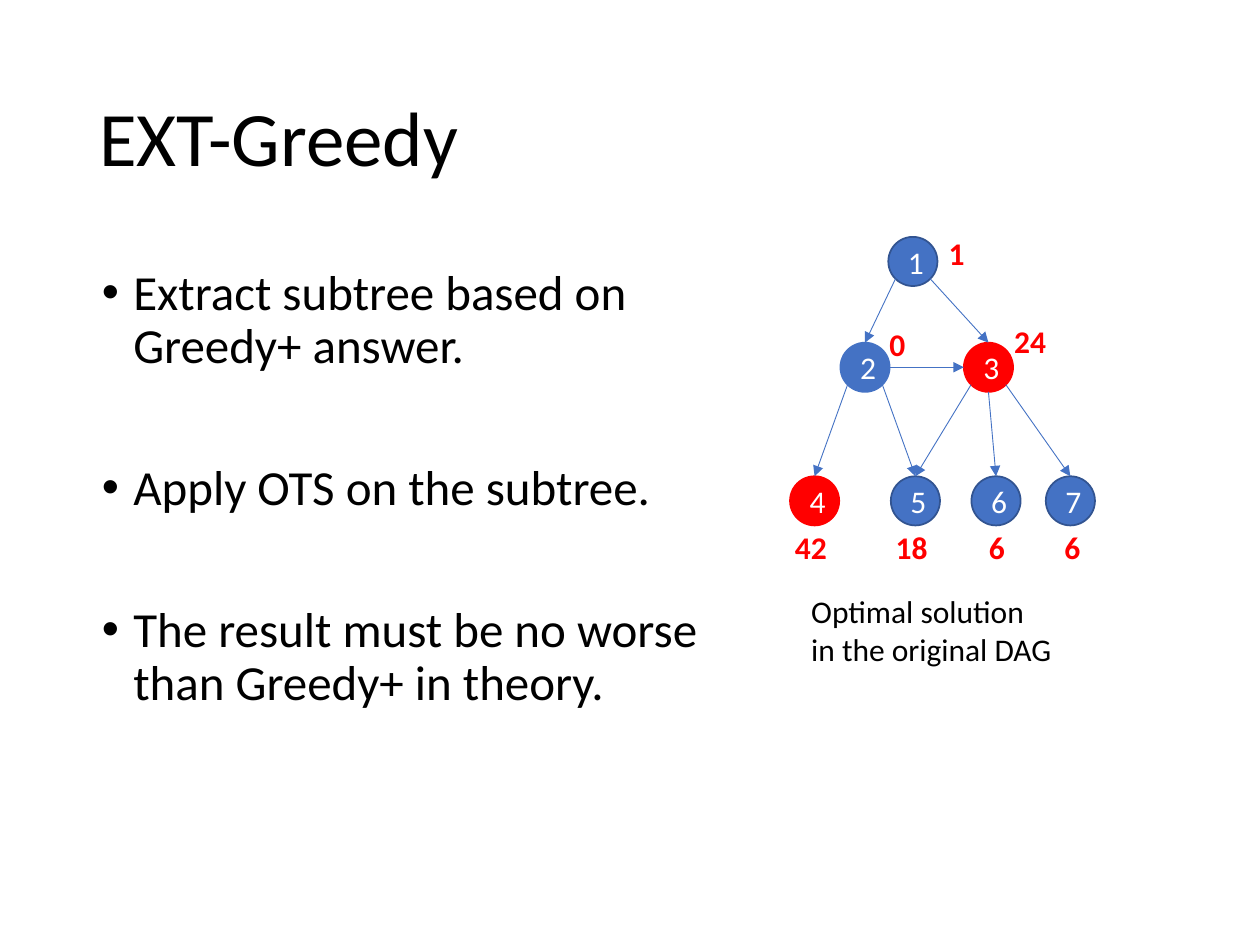
from math import cos, radians, sin

from lxml import etree
from pptx import Presentation
from pptx.dml.color import RGBColor
from pptx.enum.shapes import MSO_CONNECTOR, MSO_SHAPE
from pptx.enum.text import MSO_ANCHOR, PP_ALIGN
from pptx.oxml.ns import qn
from pptx.util import Inches, Pt

CIRCLE = MSO_SHAPE.FLOWCHART_CONNECTOR
STRAIGHT = MSO_CONNECTOR.STRAIGHT
MIDDLE = MSO_ANCHOR.MIDDLE
CENTER = PP_ALIGN.CENTER

FONT = "Calibri"
COLORS = {
    "black": "000000",
    "white": "FFFFFF",
    "blue": "4472C4",
    "navy": "325491",
    "red": "FF0000",
}
SIZE = 0.39
ROWS = (1.88, 2.72, 3.78)

# number: left, row, fill, outline
NODES = {
    1: (7.05, 0, "blue", "navy"),
    2: (6.67, 1, "blue", "blue"),
    3: (7.65, 1, "red", "red"),
    4: (6.27, 2, "red", "red"),
    5: (7.07, 2, "blue", "navy"),
    6: (7.71, 2, "blue", "navy"),
    7: (8.3, 2, "blue", "navy"),
}
# parent, child, angle on the parent's rim (clockwise from the right)
EDGES = [
    (1, 2, 135), (1, 3, 45),
    (2, 4, 135), (2, 5, 45), (2, 3, 0),
    (3, 5, 135), (3, 6, 90), (3, 7, 45),
]
# value, left, top
SCORES = [
    ("1", 7.43, 1.81), ("0", 6.96, 2.53), ("24", 7.95, 2.51),
    ("42", 6.21, 4.14), ("18", 7.01, 4.14),
    ("6", 7.75, 4.14), ("6", 8.35, 4.14),
]
POINTS = [
    "Extract subtree based on Greedy+ answer.",
    "Apply OTS on the subtree.",
    "The result must be no worse than Greedy+ in theory.",
]


def color(name):
    return RGBColor.from_string(COLORS[name])


def add_run(para, text, size, tint="black", bold=False):
    run = para.add_run()
    run.text = text
    run.font.name = FONT
    run.font.size = Pt(size)
    run.font.bold = bold
    run.font.color.rgb = color(tint)


def add_box(slide, left, top, width, height, lines, size,
            tint="black", bold=False, wrap=True):
    """Add a text box with one paragraph per line and return its frame."""
    box = slide.shapes.add_textbox(
        Inches(left), Inches(top), Inches(width), Inches(height))
    frame = box.text_frame
    frame.word_wrap = wrap
    for i, line in enumerate(lines):
        para = frame.add_paragraph() if i else frame.paragraphs[0]
        add_run(para, line, size, tint, bold)
    return frame


def add_title(slide, text):
    frame = add_box(slide, 0.69, 0.4, 8.62, 1.45, [text], 44)
    frame.vertical_anchor = MIDDLE
    frame.paragraphs[0].line_spacing = 0.9


def add_list(slide, points):
    frame = add_box(slide, 0.71, 2.08, 4.98, 3.85, points, 28)
    for i, para in enumerate(frame.paragraphs):
        para.line_spacing = 0.9
        para.space_before = Pt(51 if i else 10)
        props = para._p.get_or_add_pPr()
        props.set("marL", str(Inches(0.25)))
        props.set("indent", str(Inches(-0.25)))
        etree.SubElement(props, qn("a:buFont")).set("typeface", "Arial")
        etree.SubElement(props, qn("a:buChar")).set("char", "•")


def add_node(slide, number):
    left, row, fill, line = NODES[number]
    node = slide.shapes.add_shape(
        CIRCLE, Inches(left), Inches(ROWS[row]), Inches(SIZE), Inches(SIZE))
    node.shadow.inherit = False
    node.fill.solid()
    node.fill.fore_color.rgb = color(fill)
    node.line.color.rgb = color(line)
    node.line.width = Pt(1)
    frame = node.text_frame
    frame.vertical_anchor = MIDDLE
    para = frame.paragraphs[0]
    para.alignment = CENTER
    add_run(para, str(number), 18, "white")
    return node


def rim(number, angle):
    """Return the point on a node's rim at an angle in degrees."""
    left, row = NODES[number][:2]
    half = SIZE / 2
    turn = radians(angle)
    return (Inches(left + half + half * cos(turn)),
            Inches(ROWS[row] + half + half * sin(turn)))


def add_edge(slide, nodes, parent, child, angle):
    level = angle == 0
    end = rim(child, 180 if level else 270)
    edge = slide.shapes.add_connector(STRAIGHT, *rim(parent, angle), *end)
    if not level:
        edge.end_connect(nodes[child], 0)
    edge.line.color.rgb = color("blue")
    edge.line.width = Pt(0.5)
    etree.SubElement(edge.line._get_or_add_ln(),
                     qn("a:tailEnd")).set("type", "triangle")
    etree.SubElement(edge._element.spPr, qn("a:effectLst"))


def main():
    deck = Presentation()
    deck.slide_width, deck.slide_height = Inches(10), Inches(7.5)
    slide = deck.slides.add_slide(deck.slide_layouts[6])
    add_title(slide, "EXT-Greedy")
    nodes = {number: add_node(slide, number) for number in NODES}
    for edge in EDGES:
        add_edge(slide, nodes, *edge)
    for text, left, top in SCORES:
        width = 0.34 if len(text) == 1 else 0.48
        add_box(slide, left, top, width, 0.4, [text], 18, "red", True, False)
    add_box(slide, 6.34, 4.65, 2.24, 0.71,
            ["Optimal solution", "in the original DAG"], 18)
    add_list(slide, POINTS)
    deck.save("out.pptx")


if __name__ == "__main__":
    main()
